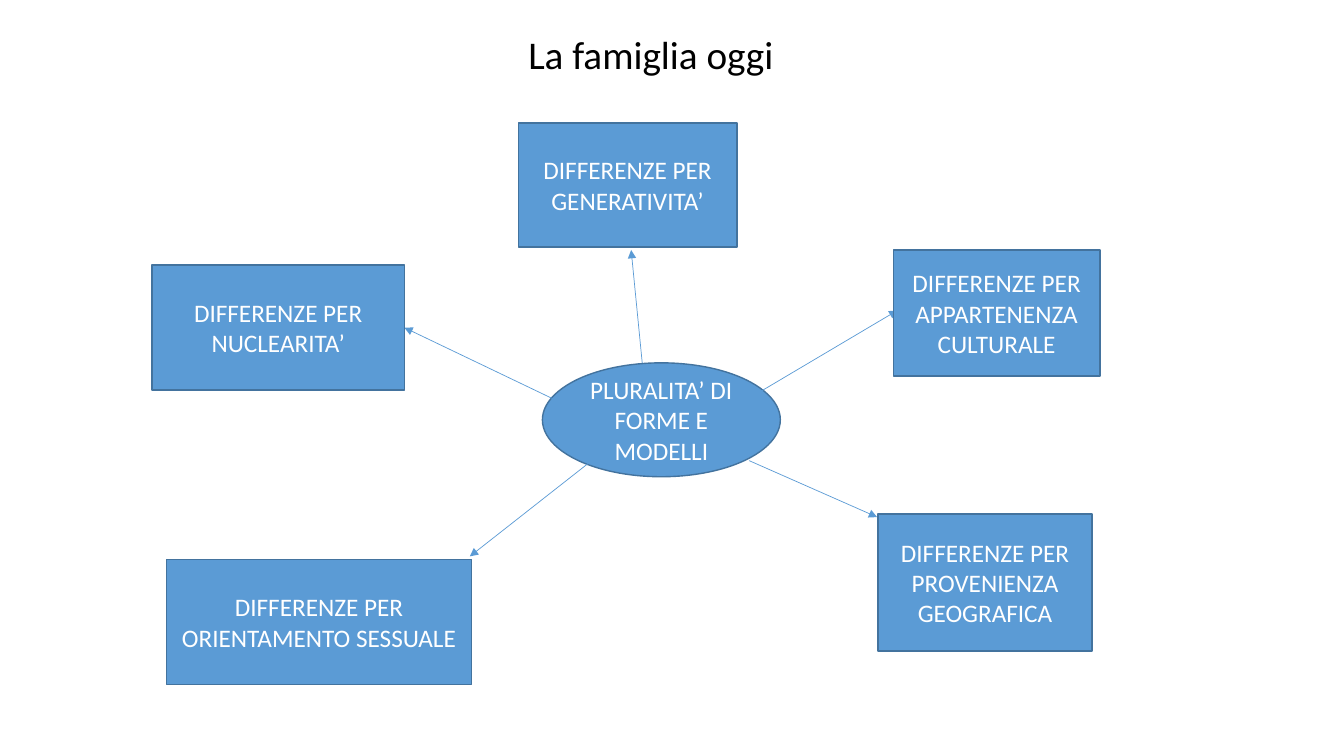
"""Build a slide with a hub and five arrows to the differences between families today."""
from pptx import Presentation
from pptx.dml.color import RGBColor
from pptx.enum.shapes import MSO_CONNECTOR, MSO_SHAPE
from pptx.enum.text import MSO_ANCHOR, PP_ALIGN
from pptx.oxml.ns import qn
from pptx.util import Inches, Pt
from lxml import etree

STRAIGHT = MSO_CONNECTOR.STRAIGHT
RECTANGLE, OVAL = MSO_SHAPE.RECTANGLE, MSO_SHAPE.OVAL
MIDDLE, CENTER = MSO_ANCHOR.MIDDLE, PP_ALIGN.CENTER
RIGHT_SIDE = 3

THEME = {
    "font": "Calibri",
    "title_size": Pt(28),
    "label_size": Pt(18),
    "fill": RGBColor(0x5B, 0x9B, 0xD5),
    "border": RGBColor(0x43, 0x73, 0x9E),
    "label": RGBColor(0xFF, 0xFF, 0xFF),
    "title": RGBColor(0x00, 0x00, 0x00),
    "border_width": Pt(1),
    "arrow_width": Pt(0.5),
}

TITLE = ("La famiglia oggi", (0.67, 0.06, 11.57, 1))
HUB = ("PLURALITA’ DI FORME E MODELLI", (5.38, 3.6, 2.36, 1.13))
PREFIX = "DIFFERENZE PER "
DIFFERENCES = [
    ("GENERATIVITA’", (5.14, 1.22, 2.17, 1.23), (6.37, 3.6), (6.26, 2.48), None),
    ("APPARTENENZA CULTURALE", (8.86, 2.48, 2.05, 1.25), (7.55, 3.88), (8.9, 3.08), None),
    ("PROVENIENZA GEOGRAFICA", (8.71, 5.1, 2.12, 1.36), (7.43, 4.57), (8.7, 5.13), None),
    ("ORIENTAMENTO SESSUALE", (1.65, 5.55, 3.03, 1.24), (5.92, 4.53), (4.66, 5.52), None),
    ("NUCLEARITA’", (1.51, 2.63, 2.5, 1.24), (5.68, 4.05), (4.01, 3.25), RIGHT_SIDE),
]


def inches(values):
    return [Inches(value) for value in values]


def write(holder, text, size, color):
    frame = holder.text_frame
    frame.word_wrap = True
    frame.vertical_anchor = MIDDLE
    paragraph = frame.paragraphs[0]
    paragraph.text = text
    paragraph.alignment = CENTER
    paragraph.font.name = THEME["font"]
    paragraph.font.size = size
    paragraph.font.color.rgb = color
    return paragraph


def add_node(slide, outline, text, box):
    node = slide.shapes.add_shape(outline, *inches(box))
    node.shadow.inherit = False
    node.fill.solid()
    node.fill.fore_color.rgb = THEME["fill"]
    node.line.color.rgb = THEME["border"]
    node.line.width = THEME["border_width"]
    write(node, text, THEME["label_size"], THEME["label"])
    return node


def add_arrow(slide, start, end):
    arrow = slide.shapes.add_connector(STRAIGHT, *inches(start + end))
    arrow.line.color.rgb = THEME["fill"]
    arrow.line.width = THEME["arrow_width"]
    etree.SubElement(arrow.line._get_or_add_ln(), qn("a:tailEnd"), type="triangle")
    etree.SubElement(arrow._element.spPr, qn("a:effectLst"))
    return arrow


def main():
    deck = Presentation()
    deck.slide_width, deck.slide_height = inches((13.33, 7.5))
    slide = deck.slides.add_slide(deck.slide_layouts[6])

    add_node(slide, OVAL, *HUB)
    arrows = [add_arrow(slide, start, end) for _, _, start, end, _ in DIFFERENCES]
    for arrow, (difference, box, _, _, side) in zip(arrows, DIFFERENCES):
        node = add_node(slide, RECTANGLE, PREFIX + difference, box)
        if side is not None:
            arrow.end_connect(node, side)

    heading, heading_box = TITLE
    title = slide.shapes.add_textbox(*inches(heading_box))
    write(title, heading, THEME["title_size"], THEME["title"]).line_spacing = 0.9

    deck.save("out.pptx")


if __name__ == "__main__":
    main()
